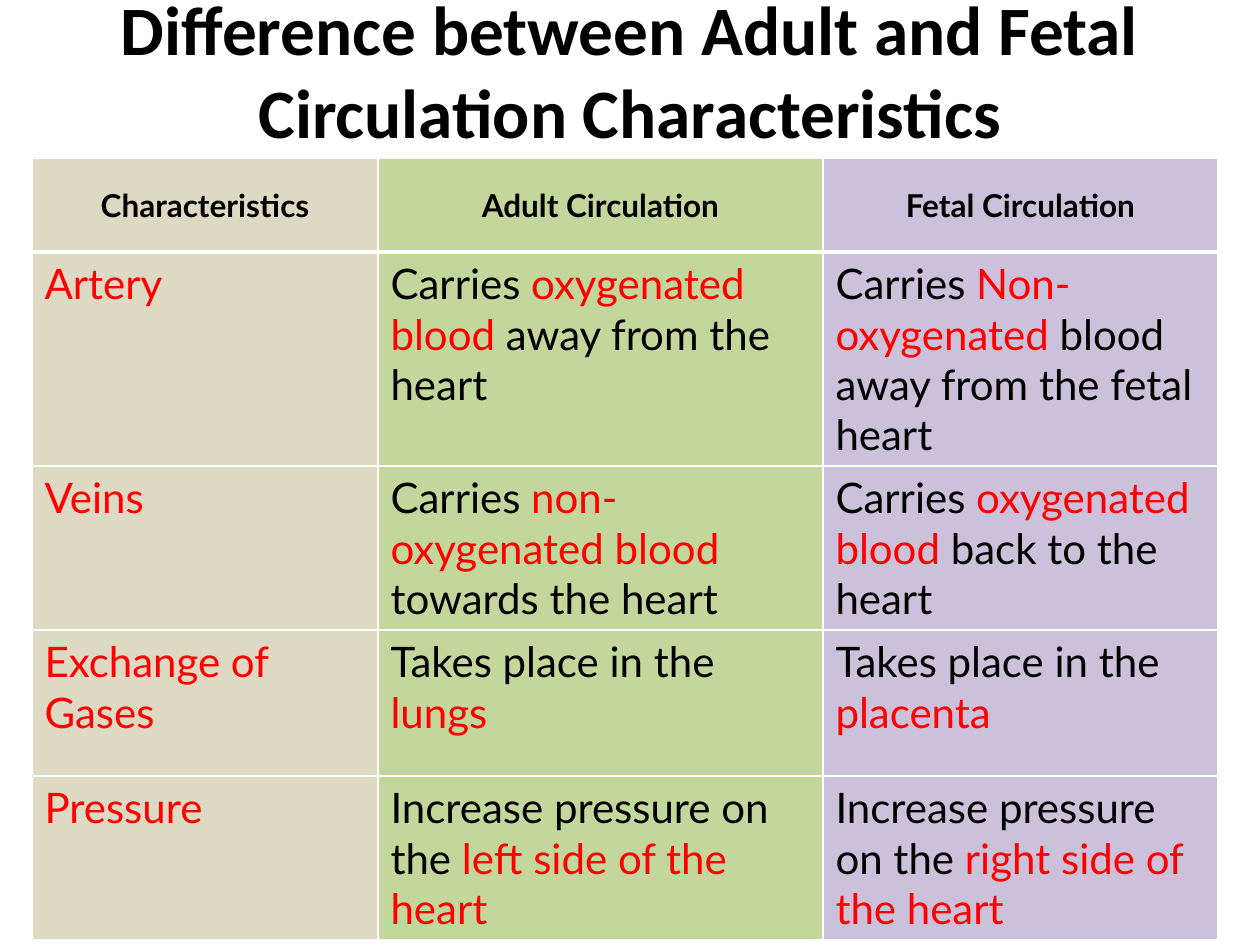
import pptx
import pptx.dml.color
import pptx.enum.text
import pptx.oxml.ns
import pptx.util
from lxml import etree

RGBColor = pptx.dml.color.RGBColor
BLACK = RGBColor(0, 0, 0)
RED = RGBColor(0xFF, 0, 0)
WHITE = RGBColor(0xFF, 0xFF, 0xFF)
COLUMN_FILLS = [
    RGBColor(0xDD, 0xD9, 0xC3),
    RGBColor(0xC3, 0xD6, 0x9B),
    RGBColor(0xCC, 0xC1, 0xDA),
]
EMU_PER_PX = 914400 // 126
COLUMN_WIDTHS = [346, 445, 395]
ROW_HEIGHTS = [94, 214, 164, 146, 164]
TITLE = "Difference between Adult and Fetal Circulation Characteristics"
HEADERS = ["Characteristics", "Adult Circulation", "Fetal Circulation"]
ROWS = [
    [
        [("Artery", RED)],
        [("Carries ", BLACK), ("oxygenated blood", RED), (" away from the heart", BLACK)],
        [("Carries ", BLACK), ("Non-oxygenated", RED), (" blood away from the fetal heart", BLACK)],
    ],
    [
        [("Veins", RED)],
        [("Carries ", BLACK), ("non- oxygenated blood ", RED), ("towards the heart", BLACK)],
        [("Carries ", BLACK), ("oxygenated blood", RED), (" back to the heart", BLACK)],
    ],
    [
        [("Exchange of Gases", RED)],
        [("Takes place in the ", BLACK), ("lungs", RED)],
        [("Takes place in the ", BLACK), ("placenta", RED)],
    ],
    [
        [("Pressure", RED)],
        [("Increase pressure on the ", BLACK), ("left side of the heart", RED)],
        [("Increase pressure on the ", BLACK), ("right side of the heart", RED)],
    ],
]


def px(length):
    """Turn a length in px into EMU."""
    return pptx.util.Emu(length * EMU_PER_PX)


def add_runs(paragraph, runs, font_name, size, bold):
    """Add coloured runs of one font to a paragraph."""
    for text, color in runs:
        run = paragraph.add_run()
        run.text = text
        run.font.name = font_name
        run.font.size = pptx.util.Pt(size)
        run.font.bold = bold
        run.font.color.rgb = color


def set_borders(cell, widths):
    """Draw white cell borders with the widths given for each side in points."""
    properties = cell._tc.get_or_add_tcPr()
    for side, width in widths.items():
        line = etree.SubElement(
            properties, pptx.oxml.ns.qn(f"a:ln{side}"), w=str(pptx.util.Pt(width))
        )
        fill = etree.SubElement(line, pptx.oxml.ns.qn("a:solidFill"))
        etree.SubElement(fill, pptx.oxml.ns.qn("a:srgbClr"), val=str(WHITE))


def add_title(slide, left, top, width, height):
    """Place the centred slide title in its box."""
    frame = slide.shapes.add_textbox(px(left), px(top), px(width), px(height)).text_frame
    frame.word_wrap = True
    frame.vertical_anchor = pptx.enum.text.MSO_ANCHOR.MIDDLE
    paragraph = frame.paragraphs[0]
    paragraph.alignment = pptx.enum.text.PP_ALIGN.CENTER
    add_runs(paragraph, [(TITLE, BLACK)], "Calibri", 39.6, True)


def add_comparison_table(slide, left, top):
    """Place the table that compares adult and fetal circulation."""
    table = slide.shapes.add_table(
        len(ROW_HEIGHTS), len(COLUMN_WIDTHS), px(left), px(top),
        px(sum(COLUMN_WIDTHS)), px(sum(ROW_HEIGHTS)),
    ).table
    table.horz_banding = False
    for column, width in zip(table.columns, COLUMN_WIDTHS):
        column.width = px(width)
    for row, height in zip(table.rows, ROW_HEIGHTS):
        row.height = px(height)
    header_row = [[(header, BLACK)] for header in HEADERS]
    for row_index, row_runs in enumerate([header_row] + ROWS):
        is_header = row_index == 0
        for column_index, runs in enumerate(row_runs):
            cell = table.cell(row_index, column_index)
            set_borders(cell, {
                "L": 1, "R": 1,
                "T": 3 if row_index == 1 else 1,
                "B": 3 if is_header else 1,
            })
            cell.fill.solid()
            cell.fill.fore_color.rgb = COLUMN_FILLS[column_index]
            paragraph = cell.text_frame.paragraphs[0]
            if is_header:
                cell.vertical_anchor = pptx.enum.text.MSO_ANCHOR.MIDDLE
                paragraph.alignment = pptx.enum.text.PP_ALIGN.CENTER
            add_runs(paragraph, runs, "Lato", 18 if is_header else 24, is_header)


def main():
    """Build and save the presentation."""
    presentation = pptx.Presentation()
    presentation.slide_width = pptx.util.Inches(10)
    presentation.slide_height = pptx.util.Inches(7.5)
    slide = presentation.slides.add_slide(presentation.slide_layouts[6])
    add_title(slide, 63, -10, 1134, 158)
    add_comparison_table(slide, 32, 158)
    presentation.save("out.pptx")


if __name__ == "__main__":
    main()
